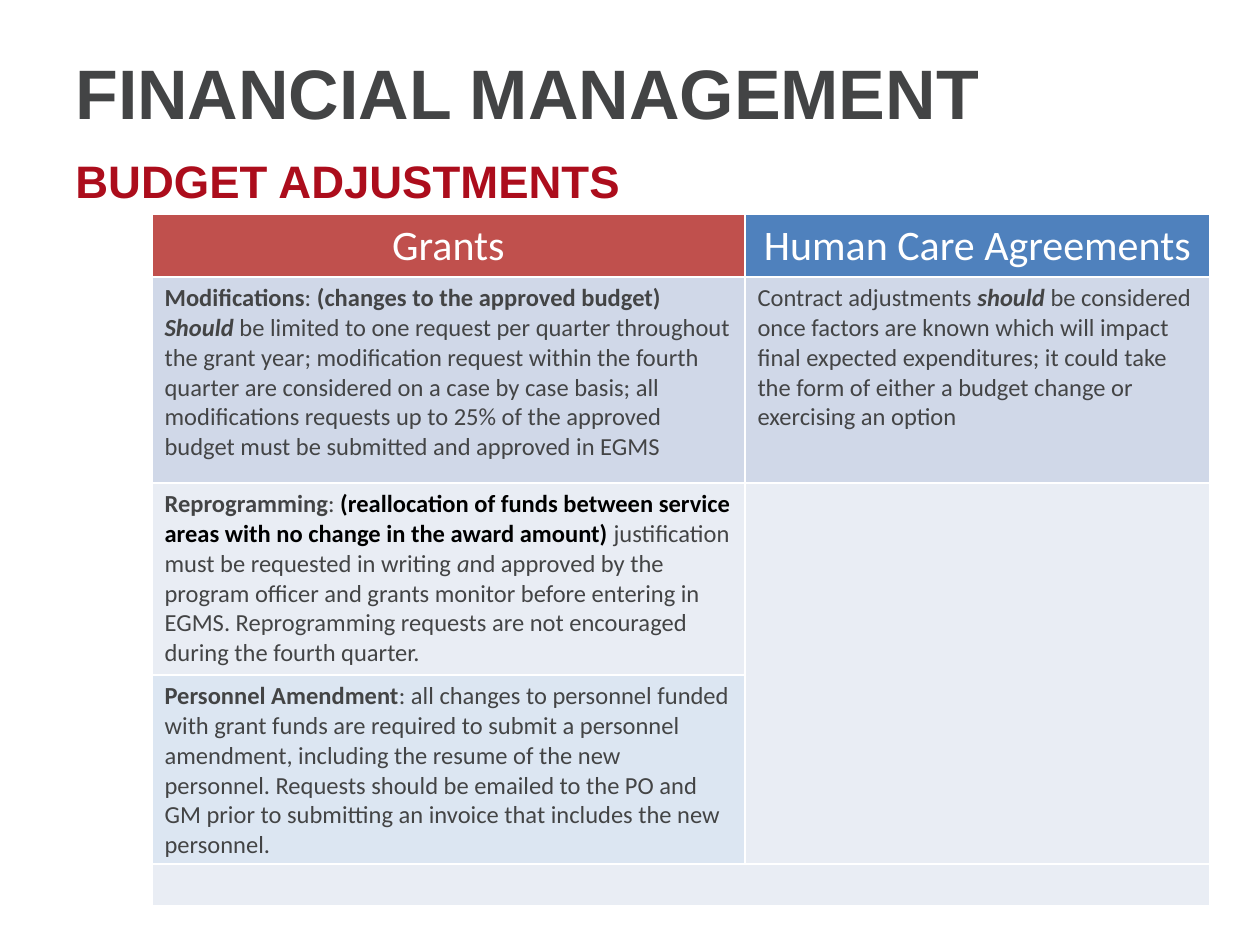
from typing import NamedTuple

from pptx import Presentation
from pptx import util as u
from pptx.dml.color import RGBColor
from pptx.enum import text

PX = 914400 // 126
GREY, RED, WHITE, BLACK = "434445", "AC0D1C", "FFFFFF", "000000"
PALE = "E9EDF4"


class Run(NamedTuple):
    text: str
    bold: bool = False
    italic: bool = False
    color: str = GREY


class Heading(NamedTuple):
    text: str
    top: int
    height: int
    size: int
    color: str


class Cell(NamedTuple):
    row: int
    col: int
    fill: str
    runs: tuple[Run, ...] = ()
    size: int = 14
    align: text.PP_ALIGN = text.PP_ALIGN.LEFT
    rows: int = 1
    cols: int = 1


def px(n: int) -> int:
    return u.Emu(n * PX)


def rgb(value: str) -> RGBColor:
    return RGBColor.from_string(value)


def header(col: int, label: str, fill: str) -> Cell:
    return Cell(0, col, fill, (Run(label, color=WHITE),), 24, text.PP_ALIGN.CENTER)


HEADINGS = [
    Heading("FINANCIAL MANAGEMENT", 38, 107, 40, GREY),
    Heading("BUDGET ADJUSTMENTS", 150, 60, 26, RED),
]
COLUMNS = [593, 465]
ROWS = [63, 206, 192, 161, 42]
CELLS = [
    header(0, "Grants", "C0504D"),
    header(1, "Human Care Agreements", "4F81BD"),
    Cell(1, 0, "D0D8E8", (
        Run("Modifications", bold=True),
        Run(": "),
        Run("(changes to the approved budget) ", bold=True),
        Run("Should", bold=True, italic=True),
        Run(" be limited to one request per quarter throughout the grant year; "
            "modification request within the fourth quarter are considered on a "
            "case by case basis; all modifications requests up to 25% of the "
            "approved budget must be submitted and approved in EGMS"),
    )),
    Cell(1, 1, "D0D8E8", (
        Run("Contract adjustments "),
        Run("should", bold=True, italic=True),
        Run(" be considered once factors are known which will impact final "
            "expected expenditures; it could take the form of either a budget "
            "change or exercising an option"),
    )),
    Cell(2, 0, PALE, (
        Run("Reprogramming", bold=True),
        Run(": "),
        Run("(reallocation of funds between service areas with no change in "
            "the award amount) ", bold=True, color=BLACK),
        Run("justification must be requested in writing "),
        Run("a", italic=True),
        Run("nd approved by the program officer and grants monitor before "
            "entering in EGMS. Reprogramming requests are not encouraged during "
            "the fourth quarter."),
    )),
    Cell(2, 1, PALE, rows=2),
    Cell(3, 0, "DCE6F2", (
        Run("Personnel Amendment", bold=True),
        Run(": all changes to personnel funded with grant funds are required to "
            "submit a personnel amendment, including the resume of the new "
            "personnel. Requests should be emailed to the PO and GM prior to "
            "submitting an invoice that includes the new personnel."),
    )),
    Cell(4, 0, PALE, cols=2),
]


def add_heading(s, item: Heading) -> None:
    sp = s.shapes.add_textbox(px(63), px(item.top), px(1134), px(item.height))
    tf = sp.text_frame
    tf.word_wrap = True
    tf.vertical_anchor = text.MSO_ANCHOR.MIDDLE
    p = tf.paragraphs[0]
    p.text = item.text
    p.font.name = "Arial"
    p.font.size = u.Pt(item.size)
    p.font.bold = True
    p.font.color.rgb = rgb(item.color)


def fill_cell(table, item: Cell) -> None:
    cell = table.cell(item.row, item.col)
    if item.rows * item.cols > 1:
        cell.merge(table.cell(item.row + item.rows - 1, item.col + item.cols - 1))
    cell.fill.solid()
    cell.fill.fore_color.rgb = rgb(item.fill)
    p = cell.text_frame.paragraphs[0]
    p.alignment = item.align
    for run in item.runs:
        r = p.add_run()
        r.text = run.text
        r.font.bold = run.bold
        r.font.italic = run.italic
        r.font.color.rgb = rgb(run.color)


def add_grid(s) -> None:
    frame = s.shapes.add_table(len(ROWS), len(COLUMNS), px(152), px(214),
                               px(sum(COLUMNS)), px(sum(ROWS)))
    table = frame.table
    for column, width in zip(table.columns, COLUMNS):
        column.width = px(width)
    for row, height in zip(table.rows, ROWS):
        row.height = px(height)
    for item in CELLS:
        fill_cell(table, item)
    sizes = {(item.row, item.col): item.size for item in CELLS}
    for i in range(len(ROWS)):
        for j in range(len(COLUMNS)):
            p = table.cell(i, j).text_frame.paragraphs[0]
            p.font.name = "Calibri"
            p.font.size = u.Pt(sizes.get((i, j), 14))


def main() -> None:
    prs = Presentation()
    prs.slide_width, prs.slide_height = px(1260), px(945)
    s = prs.slides.add_slide(prs.slide_layouts[6])
    for item in HEADINGS:
        add_heading(s, item)
    add_grid(s)
    prs.save("out.pptx")


if __name__ == "__main__":
    main()
